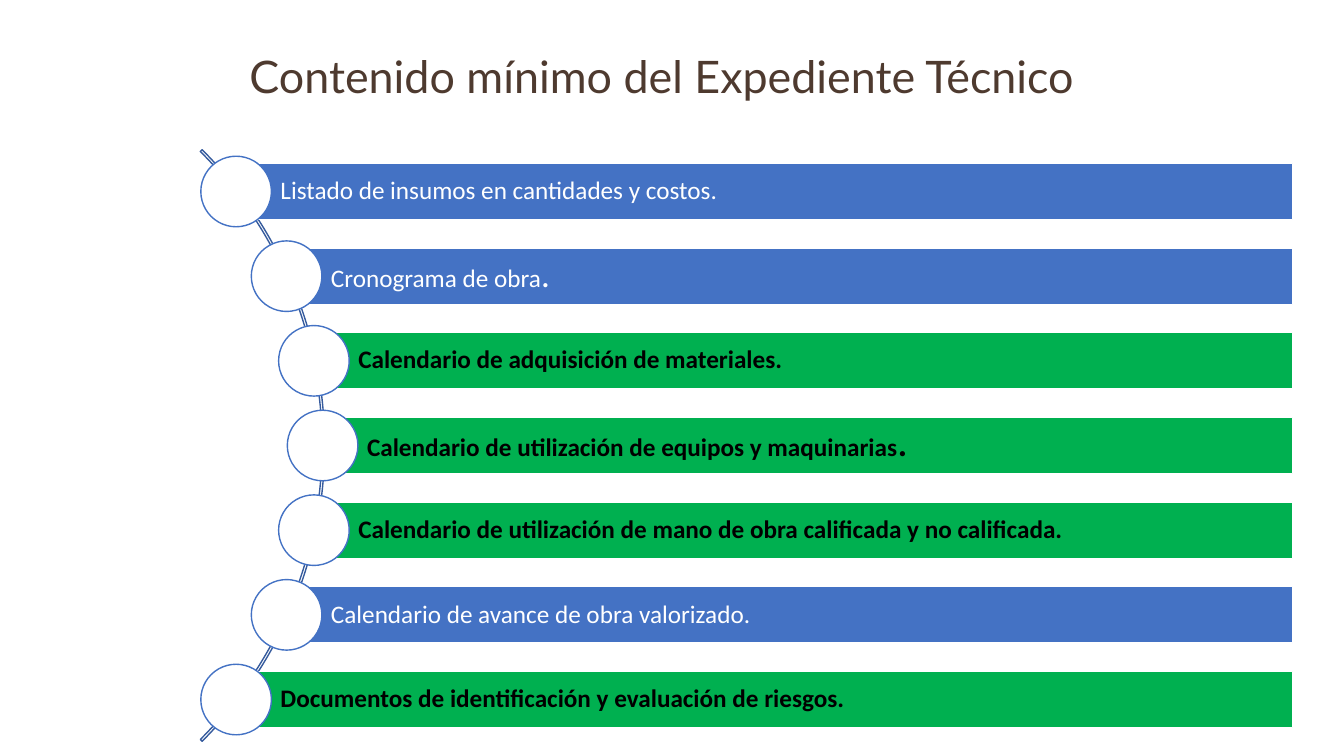
import math
import pptx
import pptx.util
import pptx.dml.color
import pptx.enum.shapes
import pptx.enum.text

Inches = pptx.util.Inches
Pt = pptx.util.Pt
KIND = pptx.enum.shapes.MSO_SHAPE
ALIGN = pptx.enum.text.PP_ALIGN
MIDDLE = pptx.enum.text.MSO_ANCHOR.MIDDLE

COLORS = {"title": "4E3A2F", "blue": "4472C4", "green": "00B050",
          "arc": "365B9D", "white": "FFFFFF", "black": "000000"}

# Text, bar colour, size of the closing dot
ROWS = [
    ("Listado de insumos en cantidades y costos", "blue", 18),
    ("Cronograma de obra", "blue", 25),
    ("Calendario de adquisición de materiales", "green", 18),
    ("Calendario de utilización de equipos y maquinarias", "green", 25),
    ("Calendario de utilización de mano de obra calificada y no calificada",
     "green", 18),
    ("Calendario de avance de obra valorizado", "blue", 18),
    ("Documentos de identificación y evaluación de riesgos", "green", 18),
]

# Curve that the circles follow, and sizes of the rows
MID_X, MID_Y, RADIUS = -0.93, 4.42, 4.13
ARC, PITCH, RIGHT, BAR, DOT = 8.3, 0.84, 12.82, 0.56, 0.7


def color(name):
    return pptx.dml.color.RGBColor.from_string(COLORS[name])


def apply(item, values):
    for name, value in values.items():
        setattr(item, name, value)


def shape(slide, kind, box, fill, line):
    item = slide.shapes.add_shape(kind, *map(Inches, box))
    item.shadow.inherit = False
    if fill:
        item.fill.solid()
        item.fill.fore_color.rgb = color(fill)
    else:
        item.fill.background()
    item.line.color.rgb = color(line)
    item.line.width = Pt(1)
    return item


def write(item, runs, font, ink, bold, align, insets):
    frame = item.text_frame
    left, top, right, bottom = map(Inches, insets)
    apply(frame, {"word_wrap": True, "vertical_anchor": MIDDLE,
                  "margin_left": left, "margin_top": top,
                  "margin_right": right, "margin_bottom": bottom})
    par = frame.paragraphs[0]
    apply(par, {"alignment": align, "line_spacing": 0.9})
    for text, size in runs:
        run = par.add_run()
        run.text = text
        apply(run.font, {"name": font, "size": Pt(size), "bold": bold})
        run.font.color.rgb = color(ink)


def title(slide, text):
    box = slide.shapes.add_textbox(*map(Inches, (1.89, 0.51, 9.35, 0.54)))
    write(box, [(text, 32)], "Lato", "title", False, ALIGN.CENTER, [0] * 4)


def curve(slide):
    box = (MID_X - ARC / 2, MID_Y - ARC / 2, ARC, ARC)
    arc = shape(slide, KIND.BLOCK_ARC, box, None, "arc")
    for index, value in enumerate((189, 27, 0.003)):
        arc.adjustments[index] = value


def row(slide, index, text, fill, dot):
    drop = (index - len(ROWS) // 2) * PITCH
    x = MID_X + math.sqrt(RADIUS ** 2 - drop ** 2)
    y = MID_Y + drop
    green = fill == "green"
    bar = shape(slide, KIND.RECTANGLE, (x, y - BAR / 2, RIGHT - x, BAR),
                fill, "white")
    write(bar, [(text, 18), (".", dot)] if dot != 18 else [(text + ".", 18)],
          "Calibri", "black" if green else "white", green,
          ALIGN.LEFT, (0.44, 0.05, 0.05, 0.05))
    shape(slide, KIND.OVAL, (x - DOT / 2, y - DOT / 2, DOT, DOT),
          "white", "blue")


def main():
    deck = pptx.Presentation()
    apply(deck, {"slide_width": Inches(13.33), "slide_height": Inches(7.5)})
    slide = deck.slides.add_slide(deck.slide_layouts[6])

    # Heading
    title(slide, "Contenido mínimo del Expediente Técnico")

    # Curved list
    curve(slide)
    for index, (text, fill, dot) in enumerate(ROWS):
        row(slide, index, text, fill, dot)

    deck.save("out.pptx")


if __name__ == "__main__":
    main()
